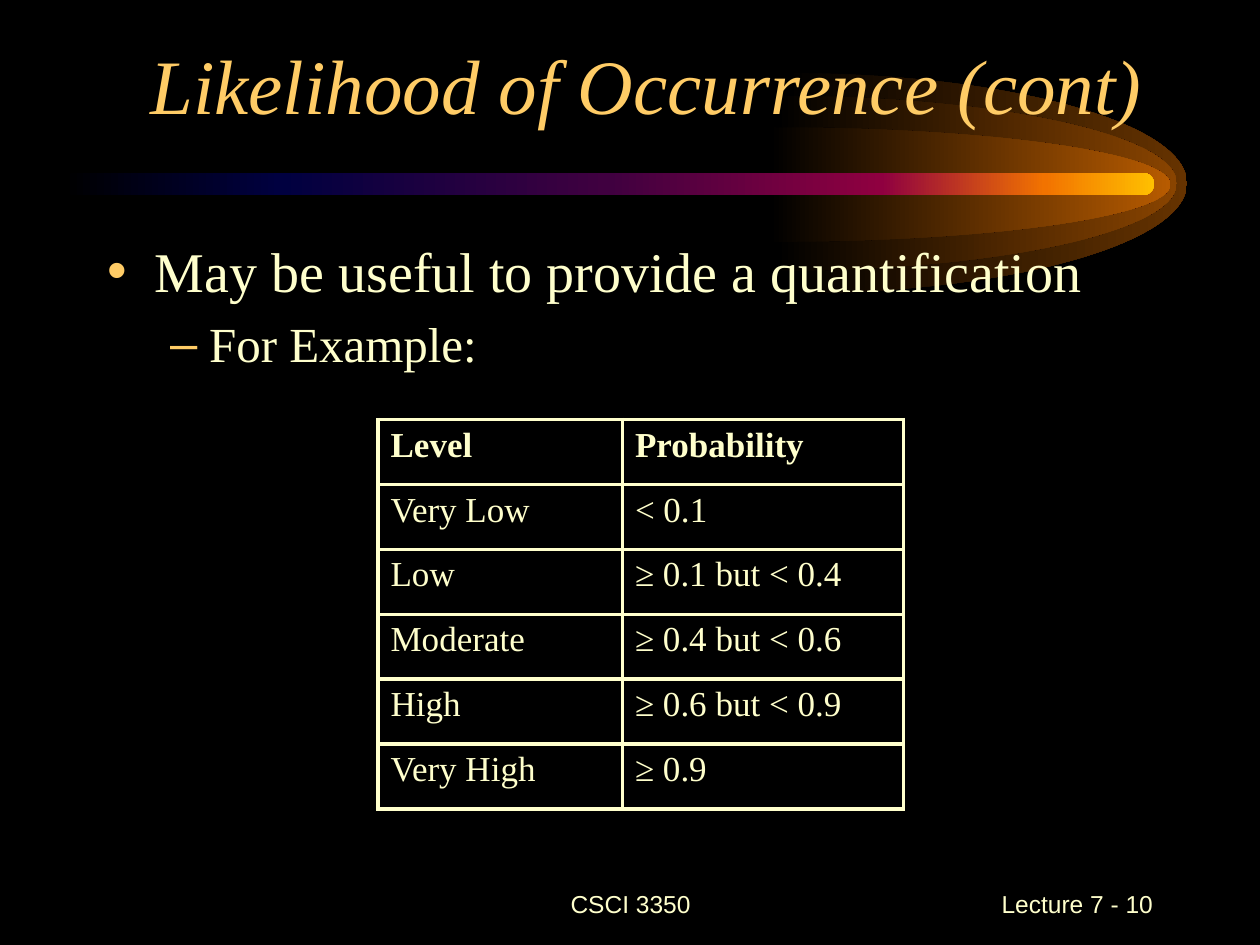
from lxml.etree import SubElement
from pptx import Presentation
from pptx.dml.color import RGBColor
from pptx.enum.shapes import MSO_SHAPE
from pptx.enum.text import MSO_ANCHOR, MSO_AUTO_SIZE, PP_ALIGN
from pptx.oxml.ns import qn
from pptx.util import Inches, Pt

# Content
TITLE = "Likelihood of Occurrence (cont)"
BULLETS = [  # text, level, size, left margin, hanging indent
    ("May be useful to provide a quantification", 0, 32, 0.38, 0.38),
    ("For Example:", 1, 28, 0.81, 0.31),
]
LEVELS = [
    ("Level", "Probability"),
    ("Very Low", "< 0.1"),
    ("Low", "≥ 0.1 but < 0.4"),
    ("Moderate", "≥ 0.4 but < 0.6"),
    ("High", "≥ 0.6 but < 0.9"),
    ("Very High", "≥ 0.9"),
]
FOOTERS = [  # text, left, width, alignment
    ("CSCI 3350", 3.42, 3.17, PP_ALIGN.CENTER),
    ("Lecture 7 - 10", 7.17, 2.08, PP_ALIGN.RIGHT),
]
COLORS = {"background": "000000", "text": "FFFFCC", "accent": "FFCC66"}
SERIF, SANS = "Times New Roman", "Arial"

# Comet: half ellipses (left, top, height, glow colour) and a tail
GLOW_WIDTH, ROUNDNESS = 3.18, 0.55
GLOWS = [(6.24, 0.58, 1.75, "663300"), (6.16, 0.76, 1.39, "894400"),
         (6.11, 1.01, 0.91, "B75B00")]
TAIL_STOPS = [(0, "000000"), (20, "000040"), (50, "400040"),
              (75, "8F0040"), (90, "F27300"), (100, "FFBF00")]


def add_run(paragraph, text, size, font=SERIF, color="text", bold=False, italic=False):
    run = paragraph.add_run()
    run.text = text
    run.font.size, run.font.name = Pt(size), font
    run.font.bold, run.font.italic = bold, italic
    run.font.color.rgb = RGBColor.from_string(COLORS[color])


def add_color(parent, color):
    SubElement(parent, qn("a:srgbClr"), val=color)


def paint_gradient(shape, stops):
    shape.shadow.inherit = False
    shape.line.fill.background()
    shape.fill.gradient()
    shape.fill.gradient_angle = 0
    stop_list = shape._element.spPr.find(".//" + qn("a:gsLst"))
    for old_stop in list(stop_list):
        stop_list.remove(old_stop)
    for position, color in stops:
        add_color(SubElement(stop_list, qn("a:gs"), pos=str(position * 1000)), color)


def place(shape, left, top, width, height):
    shape.left, shape.top = Inches(left), Inches(top)
    shape.width, shape.height = Inches(width), Inches(height)


def add_borders(cell, color, width):
    properties = cell._tc.get_or_add_tcPr()
    for side in ("lnL", "lnR", "lnT", "lnB"):
        line = SubElement(properties, qn("a:" + side), w=str(Pt(width)))
        add_color(SubElement(line, qn("a:solidFill")), color)


def round_edges(shape):
    """Bend the two sides of a right-pointing triangle into a half ellipse."""
    width, height = shape.width, shape.height
    middle, bend = height / 2, height / 2 * ROUNDNESS
    controls = [
        [(width * ROUNDNESS, 0), (width, middle - bend)],
        [(width, middle + bend), (width * ROUNDNESS, height)],
    ]
    sides = shape._element.spPr.findall(".//" + qn("a:lnTo"))
    for side, points in zip(sides, controls):
        curve = side.makeelement(qn("a:cubicBezTo"))
        for x, y in points:
            SubElement(curve, qn("a:pt"), x=str(int(x)), y=str(int(y)))
        curve.append(side[0])
        side.getparent().replace(side, curve)


def add_comet(shapes):
    for left, top, height, color in GLOWS:
        outline = shapes.build_freeform(Inches(left), Inches(top))
        outline.add_line_segments([
            (Inches(left + GLOW_WIDTH), Inches(top + height / 2)),
            (Inches(left), Inches(top + height)),
        ], close=True)
        glow = outline.convert_to_shape()
        round_edges(glow)
        paint_gradient(glow, [(0, COLORS["background"]), (100, color)])
    tail = shapes.add_shape(MSO_SHAPE.ROUNDED_RECTANGLE, Inches(0.5), Inches(1.37),
                            Inches(8.66), Inches(0.18))
    tail.adjustments[0] = 0.5
    paint_gradient(tail, TAIL_STOPS)


def add_levels_table(shapes):
    frame = shapes.add_table(len(LEVELS), 2, Inches(3), Inches(3.33),
                             Inches(4.17), Inches(3.09))
    table = frame.table
    table.first_row = table.horz_banding = False
    for column, width in zip(table.columns, (1.94, 2.23)):
        column.width = Inches(width)
    for row, values in enumerate(LEVELS):
        for column, value in enumerate(values):
            cell = table.cell(row, column)
            add_borders(cell, COLORS["text"], 2.25)
            cell.fill.background()
            add_run(cell.text_frame.paragraphs[0], value, 20, bold=row == 0)


def main():
    presentation = Presentation()
    presentation.slide_width, presentation.slide_height = Inches(10), Inches(7.5)
    slide = presentation.slides.add_slide(presentation.slide_layouts[1])
    slide.background.fill.solid()
    slide.background.fill.fore_color.rgb = RGBColor.from_string(COLORS["background"])
    shapes = slide.shapes
    title, body = shapes.title, slide.placeholders[1]

    add_comet(shapes)

    # Footers
    for text, left, width, alignment in FOOTERS:
        footer = shapes.add_textbox(Inches(left), Inches(6.92), Inches(width), Inches(0.5))
        footer.text_frame.word_wrap = True
        footer.text_frame.vertical_anchor = MSO_ANCHOR.MIDDLE
        line = footer.text_frame.paragraphs[0]
        line.alignment = alignment
        add_run(line, text, 14, font=SANS)

    # Title and body go in front of the comet
    for placeholder in (title, body):
        shapes._spTree.append(placeholder._element)
        placeholder.text_frame.auto_size = MSO_AUTO_SIZE.NONE

    # Title
    place(title, 0.67, 0.25, 8.5, 0.83)
    title.text_frame.vertical_anchor = MSO_ANCHOR.BOTTOM
    heading = title.text_frame.paragraphs[0]
    heading.alignment = PP_ALIGN.RIGHT
    add_run(heading, TITLE, 44, color="accent", italic=True)

    # Bullets
    place(body, 0.75, 1.83, 8.58, 4.92)
    for index, (text, level, size, margin, hanging) in enumerate(BULLETS):
        frame = body.text_frame
        bullet = frame.add_paragraph() if index else frame.paragraphs[0]
        bullet.level = level
        properties = bullet._p.get_or_add_pPr()
        properties.set("marL", str(Inches(margin)))
        properties.set("indent", str(-Inches(hanging)))
        add_color(SubElement(properties, qn("a:buClr")), COLORS["accent"])
        add_run(bullet, text, size)

    add_levels_table(shapes)
    presentation.save("out.pptx")


if __name__ == "__main__":
    main()
